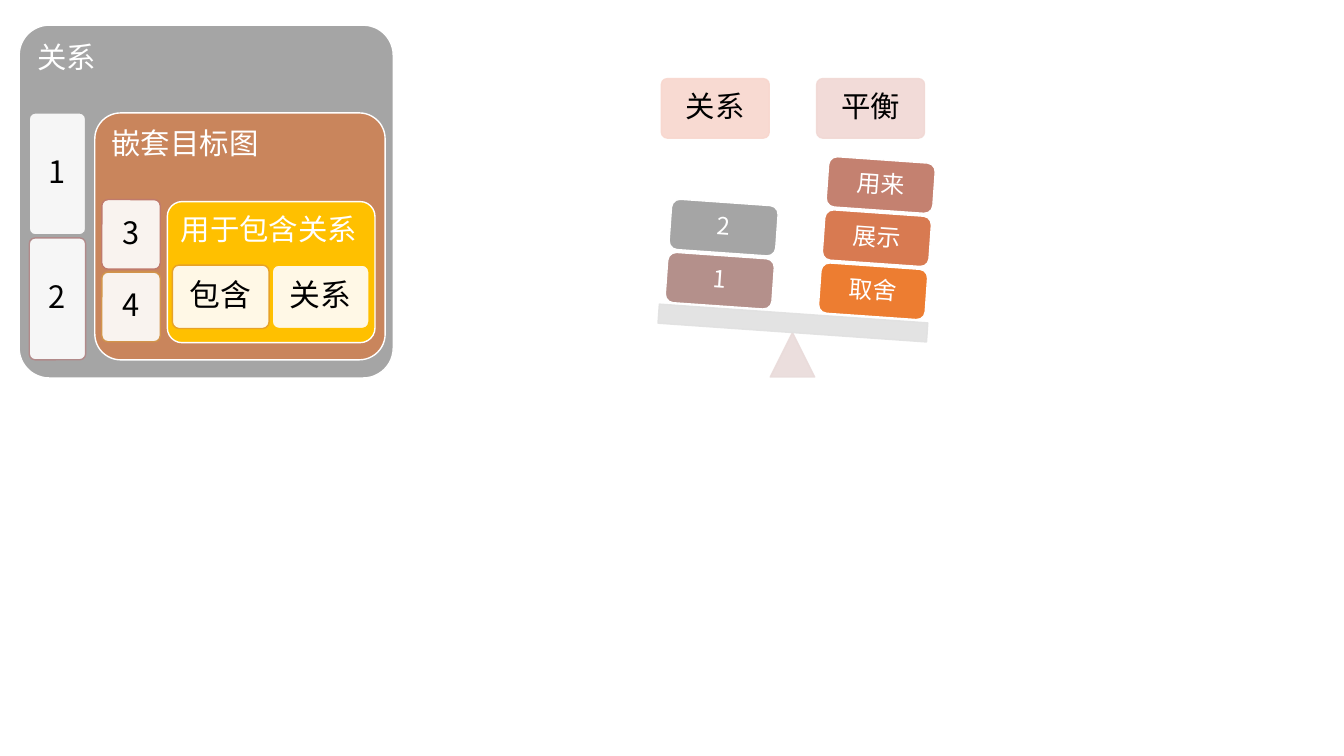
from lxml.etree import SubElement
from pptx import Presentation
from pptx.dml.color import RGBColor
from pptx.enum.shapes import MSO_SHAPE
from pptx.enum.text import MSO_ANCHOR, PP_ALIGN
from pptx.oxml.ns import qn
from pptx.util import Inches, Pt

FONT = "Noto Sans CJK SC"
CELL = Inches(0.1)  # side of one grid square: columns and rows are equal
TILT = 4
COLORS = {
    "white": "FFFFFF", "black": "000000",
    "gray": "A5A5A5", "brown": "C9855C", "yellow": "FFC000",
    "rose": "B18A8A", "clay": "C07A6C", "sand": "D2944B", "amber": "E7A227",
    "left_label": "F8D7CE", "right_label": "F1D8D4",
    "pivot": "E9DBDA", "beam": "E1E1E1",
    "orange": "ED7D31", "coral": "D87A51", "brick": "C48170", "mauve": "B4908B",
}


def color(name):
    return RGBColor.from_string(COLORS[name])


def set_opacity(fill_element, percent):
    srgb = next(fill_element.iter(qn("a:srgbClr")))
    SubElement(srgb, qn("a:alpha")).set("val", str(percent * 1000))


def write_text(shape, text, size=22, ink="black", inset=0.09,
               align=PP_ALIGN.CENTER, anchor=MSO_ANCHOR.MIDDLE):
    frame = shape.text_frame
    frame.word_wrap = True
    frame.vertical_anchor = anchor
    frame.margin_left = frame.margin_right = Inches(inset)
    frame.margin_top = frame.margin_bottom = Inches(inset)
    paragraph = frame.paragraphs[0]
    paragraph.alignment = align
    paragraph.line_spacing = 0.9
    run = paragraph.add_run()
    run.text = text
    run.font.size = Pt(size)
    run.font.name = FONT
    run.font.color.rgb = color(ink)
    SubElement(run.font._element, qn("a:ea")).set("typeface", FONT)


def add_block(group, kind, column, row, columns, rows, fill, line="white",
              corner=None, opacity=100, line_opacity=100, tilt=0):
    """Place one filled preset shape on the grid."""
    box = [round(length * CELL) for length in (column, row, columns, rows)]
    shape = group.shapes.add_shape(kind, *box)
    shape.shadow.inherit = False
    shape.rotation = tilt
    if corner is not None:
        shape.adjustments[0] = corner
    shape.fill.solid()
    shape.fill.fore_color.rgb = color(fill)
    shape.line.color.rgb = color(line)
    shape.line.width = Pt(1)
    properties = shape._element.spPr
    if opacity < 100:
        set_opacity(properties.find(qn("a:solidFill")), opacity)
    if line_opacity < 100:
        set_opacity(properties.find(qn("a:ln")), line_opacity)
    return shape


def add_ring(group, title, *box, fill, corner=0.105):
    """Add a nested panel with its title at the top left."""
    shape = add_block(group, MSO_SHAPE.ROUNDED_RECTANGLE, *box, fill=fill, corner=corner)
    write_text(shape, title, size=21, ink="white",
               align=PP_ALIGN.LEFT, anchor=MSO_ANCHOR.TOP)


def add_items(group, items, column, row, columns, rows, across=0, down=0):
    """Add pale cards at equal steps across or down."""
    for index, (text, line) in enumerate(items):
        shape = add_block(group, MSO_SHAPE.ROUNDED_RECTANGLE,
                          column + index * across, row + index * down, columns, rows,
                          fill="white", line=line, corner=0.105, opacity=90)
        write_text(shape, text)


def add_pale(group, kind, *box, fill, **options):
    return add_block(group, kind, *box, fill=fill, line=fill,
                     opacity=90, line_opacity=90, **options)


def add_weights(group, column, row, weights):
    """Stack tilted weights upward from the beam."""
    for level, (text, fill) in enumerate(weights):
        shape = add_block(group, MSO_SHAPE.ROUNDED_RECTANGLE,
                          column + level * 0.38, row - level * 5.27, 10.6, 5,
                          fill=fill, tilt=TILT)
        write_text(shape, text, size=17, ink="white", inset=0.07)


def add_nested_targets(slide):
    group = slide.shapes.add_group_shape()
    # Outer panel
    add_ring(group, "关系", 1.9, 2.5, 37.1, 35, fill="gray", corner=0.085)
    add_items(group, [("1", "gray"), ("2", "rose")], 2.9, 11.2, 5.6, 12.1, down=12.4)
    # Middle panel
    add_ring(group, "嵌套目标图", 9.4, 11.2, 28.8, 24.5, fill="brown")
    add_items(group, [("3", "clay"), ("4", "sand")], 10.1, 19.8, 5.8, 6.9, down=7.2)
    # Inner panel
    add_ring(group, "用于包含关系", 16.6, 20, 20.6, 14, fill="yellow")
    add_items(group, [("包含", "amber"), ("关系", "yellow")], 17.1, 26.3, 9.6, 6.3, across=9.9)


def add_balance(slide):
    group = slide.shapes.add_group_shape()
    # Labels above the two sides
    labels = [("关系", "left_label"), ("平衡", "right_label")]
    for index, (text, fill) in enumerate(labels):
        label = add_pale(group, MSO_SHAPE.ROUNDED_RECTANGLE,
                         65.6 + index * 15.4, 7.8, 10.7, 5.9, fill=fill, corner=0.1)
        write_text(label, text, size=21)
    # Pivot and beam
    add_pale(group, MSO_SHAPE.ISOSCELES_TRIANGLE, 76.4, 33, 4.4, 4.4, fill="pivot")
    add_pale(group, MSO_SHAPE.RECTANGLE, 65.3, 31.1, 26.7, 1.9, fill="beam", tilt=TILT)
    # Weights
    add_weights(group, 81.3, 26.4, [("取舍", "orange"), ("展示", "coral"), ("用来", "brick")])
    add_weights(group, 66.1, 25.35, [("1", "mauve"), ("2", "gray")])


def main():
    presentation = Presentation()
    presentation.slide_width = Inches(13.33)
    presentation.slide_height = Inches(7.5)
    slide = presentation.slides.add_slide(presentation.slide_layouts[6])
    add_nested_targets(slide)
    add_balance(slide)
    presentation.save("out.pptx")


if __name__ == "__main__":
    main()
